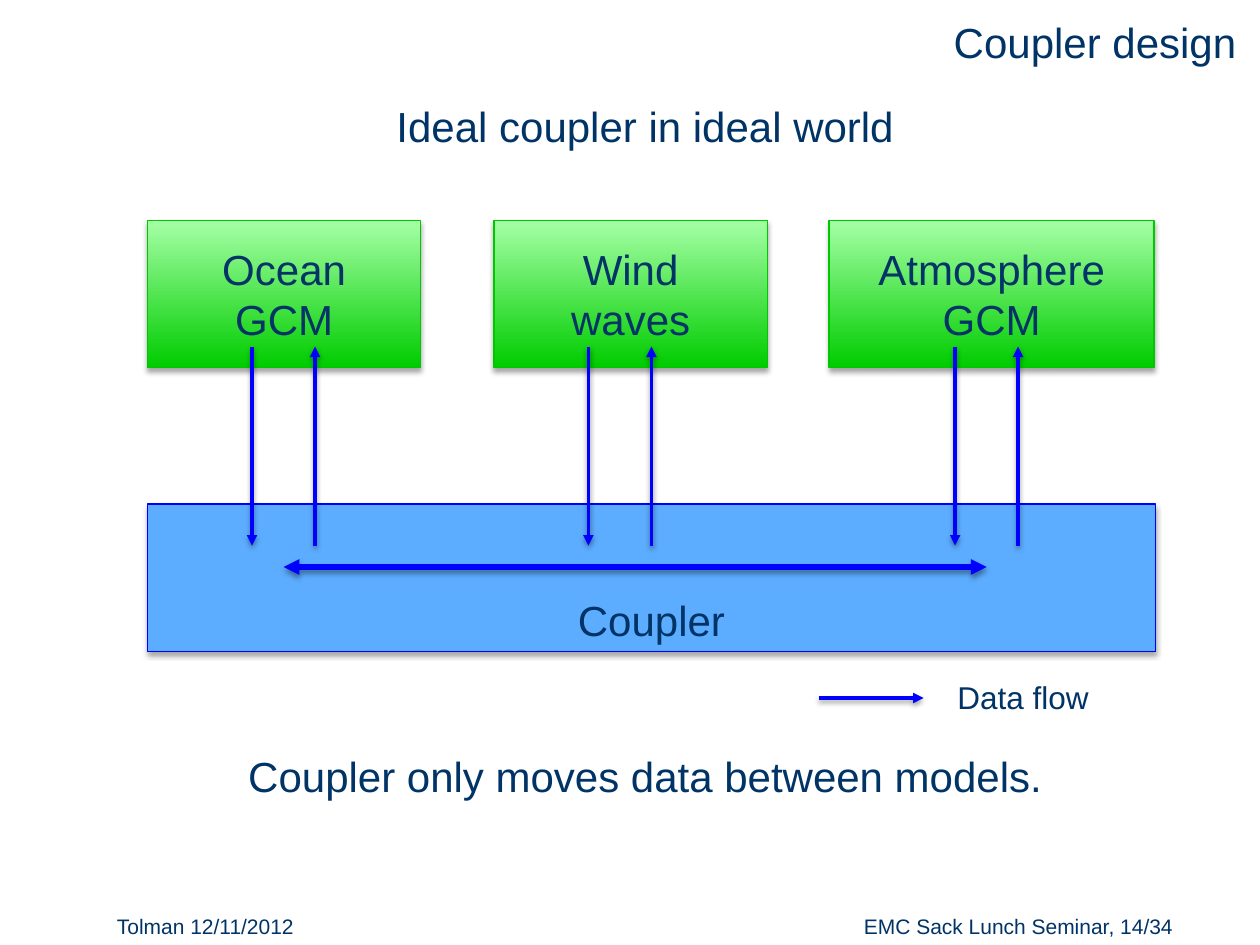
from lxml import etree
from pptx import Presentation
from pptx import util as u
from pptx.dml.color import RGBColor
from pptx.enum import shapes, text
from pptx.oxml import ns

NAVY, BLUE, SKY = "003366", "0000FF", "5CADFF"
GREEN, LIGHT_GREEN, GREEN_EDGE = "00CC00", "A5FFA5", "00C800"
LEFT, CENTER, RIGHT = text.PP_ALIGN.LEFT, text.PP_ALIGN.CENTER, text.PP_ALIGN.RIGHT


def color(value):
    return RGBColor.from_string(value)


def add_element(parent, tag, **attributes):
    return etree.SubElement(parent, ns.qn(tag), attributes)


class SlideBuilder:
    font = "Arial"

    def __init__(self, slide):
        self.slide = slide

    def label(self, words, left, top, width, height, align=CENTER, size=24,
              anchor=text.MSO_ANCHOR.TOP):
        box = self.slide.shapes.add_textbox(
            u.Inches(left), u.Inches(top), u.Inches(width), u.Inches(height))
        frame = box.text_frame
        frame.word_wrap = True
        frame.vertical_anchor = anchor
        paragraph = frame.paragraphs[0]
        paragraph.alignment = align
        run = paragraph.add_run()
        run.text = words
        run.font.name = self.font
        run.font.size = u.Pt(size)
        run.font.color.rgb = color(NAVY)

    def shadow(self, shape, opacity, distance):
        """Add a soft black shadow straight below; call after setting the line."""
        effects = add_element(shape._element.spPr, "a:effectLst")
        outer = add_element(effects, "a:outerShdw", blurRad=str(u.Pt(3.1)),
                            dist=str(u.Pt(distance)), dir="5400000", rotWithShape="0")
        black = add_element(outer, "a:srgbClr", val="000000")
        add_element(black, "a:alpha", val=str(opacity * 1000))

    def block(self, left, top, width, height, fills, edge):
        """Draw a rectangle; two fills make a gradient from bottom to top."""
        shape = self.slide.shapes.add_shape(
            shapes.MSO_SHAPE.RECTANGLE,
            u.Inches(left), u.Inches(top), u.Inches(width), u.Inches(height))
        if len(fills) == 1:
            shape.fill.solid()
            shape.fill.fore_color.rgb = color(fills[0])
        else:
            shape.fill.gradient()
            shape.fill.gradient_angle = 90
            for stop, fill in zip(shape.fill.gradient_stops, fills):
                stop.color.rgb = color(fill)
        shape.line.color.rgb = color(edge)
        shape.line.width = u.Pt(0.75)
        self.shadow(shape, 35, 1.8)

    def arrow(self, start, end, width=2, both_ends=False):
        connector = self.slide.shapes.add_connector(
            shapes.MSO_CONNECTOR.STRAIGHT, *(u.Inches(value) for value in start + end))
        connector.line.color.rgb = color(BLUE)
        connector.line.width = u.Pt(width)
        line = connector.line._get_or_add_ln()
        for tag in ("a:headEnd", "a:tailEnd") if both_ends else ("a:tailEnd",):
            add_element(line, tag, type="triangle")
        self.shadow(connector, 38, 1.6)


def main():
    presentation = Presentation()
    presentation.slide_width = u.Inches(10)
    presentation.slide_height = u.Inches(7.5)
    builder = SlideBuilder(presentation.slides.add_slide(presentation.slide_layouts[6]))

    builder.label("Tolman 12/11/2012", 0.83, 7.2, 3, 0.3, LEFT, 12)
    builder.label("EMC Sack Lunch Seminar, 14/34", 6.08, 7.2, 3.33, 0.3, RIGHT, 12)
    builder.label("Coupler design", 4.08, 0.08, 5.83, 0.5, RIGHT,
                  anchor=text.MSO_ANCHOR.MIDDLE)
    builder.label("Ideal coupler in ideal world", 1.08, 0.75, 8.08, 0.5)

    builder.block(1.17, 4, 8, 1.17, [SKY], BLUE)
    builder.label("Coupler", 1.17, 4.67, 8, 0.5)

    models = [  # name, block left, block width, label width, left arrow
        ("Ocean GCM", 1.17, 2.17, 1.83, 2),
        ("Wind waves", 3.92, 2.17, 1.83, 4.67),
        ("Atmosphere GCM", 6.58, 2.58, 2.19, 7.58),
    ]
    model_end, coupler_end = 2.75, 4.33
    for name, left, width, label_width, down in models:
        builder.block(left, 1.75, width, 1.17, [GREEN, LIGHT_GREEN], GREEN_EDGE)
        builder.label(name, left + (width - label_width) / 2, 1.88, label_width, 0.91)
        up = down + 0.5
        builder.arrow((down, model_end), (down, coupler_end))
        builder.arrow((up, coupler_end), (up, model_end))

    builder.arrow((2.25, 4.5), (7.83, 4.5), width=3, both_ends=True)
    builder.arrow((6.5, 5.54), (7.33, 5.54))
    builder.label("Data flow", 7.5, 5.33, 1.42, 0.4, LEFT, 18)
    builder.label("Coupler only moves data between models.", 1.08, 5.91, 8.08, 0.5)

    presentation.save("out.pptx")


if __name__ == "__main__":
    main()
